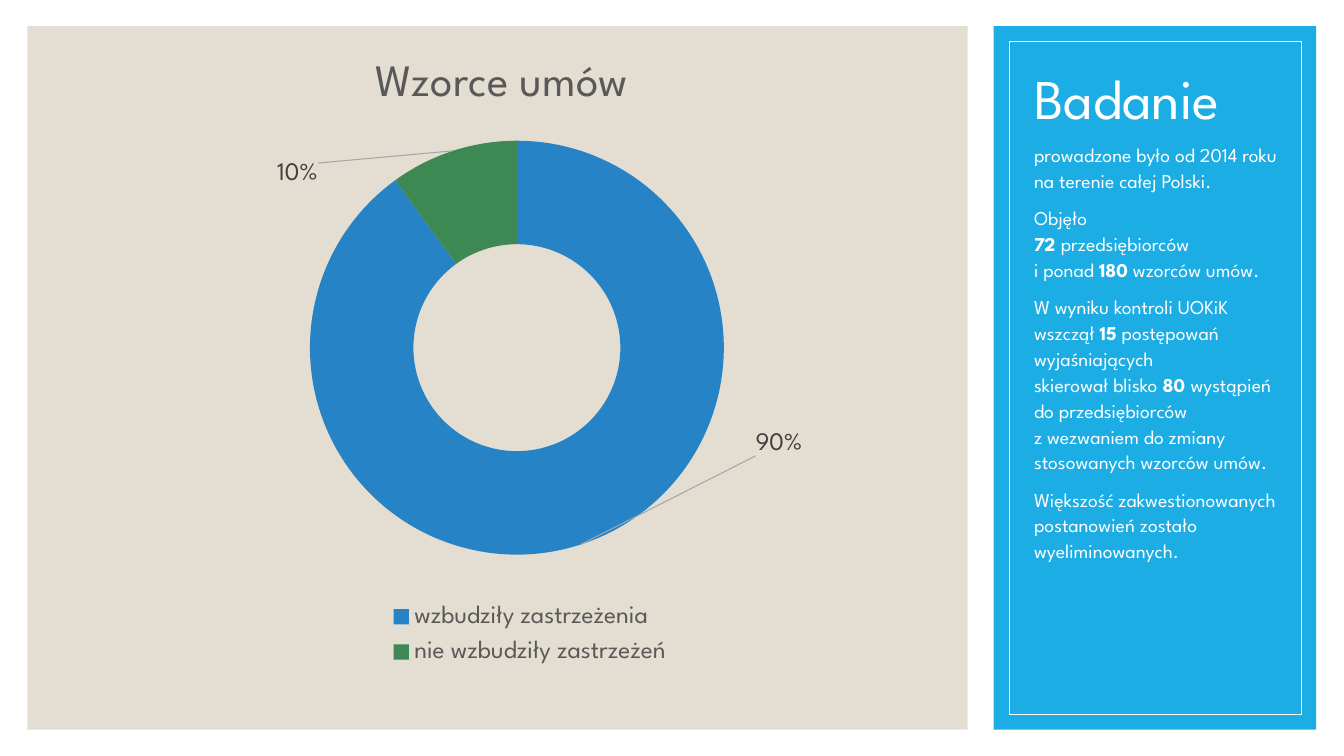
from lxml import etree
from pptx import Presentation
from pptx.chart.data import CategoryChartData
from pptx.dml.color import RGBColor
from pptx.enum.chart import XL_CHART_TYPE, XL_LEGEND_POSITION
from pptx.enum.shapes import MSO_SHAPE
from pptx.enum.text import MSO_ANCHOR
from pptx.oxml import parse_xml
from pptx.oxml.ns import qn
from pptx.util import Cm, Pt

DOUGHNUT = XL_CHART_TYPE.DOUGHNUT
BOTTOM_LEGEND = XL_LEGEND_POSITION.BOTTOM
RECTANGLE = MSO_SHAPE.RECTANGLE
TOP, BOTTOM = MSO_ANCHOR.TOP, MSO_ANCHOR.BOTTOM

FONT = "League Spartan"
COLORS = {
    "sand": "E3DED1",
    "sky": "1CADE4",
    "white": "FFFFFF",
    "blue": "2683C6",
    "green": "3E8853",
    "title": "595959",
    "label": "404040",
    "leader": "A6A6A6",
}
CHART_NS = "http://schemas.openxmlformats.org/drawingml/2006/chart"
DRAWING_NS = "http://schemas.openxmlformats.org/drawingml/2006/main"


def style(font, size, color):
    font.name = FONT
    font.size = Pt(size)
    font.color.rgb = RGBColor.from_string(COLORS[color])


def make_layout(**values):
    layout = etree.Element(qn("c:layout"))
    manual = etree.SubElement(layout, qn("c:manualLayout"))
    for tag, value in values.items():
        etree.SubElement(manual, qn(f"c:{tag}")).set("val", str(value))
    return layout


deck = Presentation()
deck.slide_width, deck.slide_height = Cm(33.87), Cm(19.05)
page = deck.slides.add_slide(deck.slide_layouts[6])

panels = [
    (0.69, 0.66, 23.7, 17.73, "sand", None),
    (25.04, 0.66, 8.13, 17.73, "sky", None),
    (25.43, 1.04, 7.37, 16.97, None, "white"),
]
for left, top, width, height, fill, line in panels:
    panel = page.shapes.add_shape(RECTANGLE, Cm(left), Cm(top), Cm(width), Cm(height))
    panel.shadow.inherit = False
    if fill:
        panel.fill.solid()
        panel.fill.fore_color.rgb = RGBColor.from_string(COLORS[fill])
    else:
        panel.fill.background()
    if line:
        panel.line.color.rgb = RGBColor.from_string(COLORS[line])
        panel.line.width = Pt(0.5)
    else:
        panel.line.fill.background()

data = CategoryChartData()
data.categories = ["wzbudziły zastrzeżenia", "nie wzbudziły zastrzeżeń"]
data.add_series("Wzorce umów", (90, 10))
chart = page.shapes.add_chart(
    DOUGHNUT, Cm(2.34), Cm(1.14), Cm(21.59), Cm(16.05), data
).chart
style(chart.font, 10, "title")

chart.has_title = True
chart_title = chart.chart_title
heading = chart_title.text_frame.paragraphs[0]
heading.text = "Wzorce umów"
style(heading.font, 32, "title")
heading.font.bold = False
chart_title.include_in_layout = False
title_xml = chart_title._element
for old in title_xml.findall(qn("c:layout")):
    title_xml.remove(old)
title_xml.find(qn("c:tx")).addnext(
    make_layout(xMode="edge", yMode="edge", x=0.32, y=0.01)
)

chart.has_legend = True
legend = chart.legend
legend.position = BOTTOM_LEGEND
legend.include_in_layout = False
style(legend.font, 18, "title")
legend_xml = legend._element
for old in legend_xml.findall(qn("c:layout")):
    legend_xml.remove(old)
legend_xml.find(qn("c:legendPos")).addnext(
    make_layout(xMode="edge", yMode="edge", x=0.33, y=0.86, w=0.36, h=0.13)
)

plot_area = chart._chartSpace.chart.plotArea
for old in plot_area.findall(qn("c:layout")):
    plot_area.remove(old)
plot_area.insert(0, make_layout(
    layoutTarget="inner", xMode="edge", yMode="edge", x=0.25, y=0.15, w=0.49, h=0.65
))
plot_area.find(".//" + qn("c:holeSize")).set("val", "75")

series = chart.plots[0].series[0]
labels = series.data_labels
style(labels.font, 18, "label")
labels.show_value = False
labels.show_percentage = True
labels.number_format = "0%"
labels.number_format_is_linked = False

slices = [("blue", 0.25, -0.08), ("green", -0.2, -0.04)]
for index, (color, shift_x, shift_y) in enumerate(slices):
    point = series.points[index]
    point.format.fill.solid()
    point.format.fill.fore_color.rgb = RGBColor.from_string(COLORS[color])
    point.format.line.fill.background()
    style(point.data_label.font, 18, "label")
    label_xml = labels._element.findall(qn("c:dLbl"))[index]
    label_xml.find(qn("c:idx")).addnext(make_layout(x=shift_x, y=shift_y))
    label_xml.find(qn("c:showVal")).set("val", "0")
    label_xml.find(qn("c:showPercent")).set("val", "1")

for old in labels._element.findall(qn("c:showLeaderLines")):
    labels._element.remove(old)
etree.SubElement(labels._element, qn("c:showLeaderLines")).set("val", "1")
labels._element.append(parse_xml(
    f'<c:leaderLines xmlns:c="{CHART_NS}" xmlns:a="{DRAWING_NS}"><c:spPr>'
    f'<a:ln w="9525"><a:solidFill><a:srgbClr val="{COLORS["leader"]}"/></a:solidFill></a:ln>'
    "</c:spPr></c:leaderLines>"
))

title_text = [[["Badanie"]]]
body_text = [
    [["prowadzone było od 2014 roku na terenie całej Polski."]],
    [["Objęło"], ["", "72 ", "przedsiębiorców "], ["i ponad ", "180", " wzorców umów."]],
    [
        ["W wyniku kontroli UOKiK wszczął ", "15", " postępowań wyjaśniających"],
        ["skierował blisko ", "80 ", "wystąpień do przedsiębiorców "],
        ["z wezwaniem do zmiany stosowanych wzorców umów."],
    ],
    [["Większość zakwestionowanych postanowień zostało wyeliminowanych."]],
]
text_boxes = [
    (-1.14, 4.57, BOTTOM, 40, 0.9, 0, title_text),
    (3.43, 14.27, TOP, 14, 1.1, 8, body_text),
]
for top, height, anchor, size, spacing, before, paragraphs in text_boxes:
    box = page.shapes.add_textbox(Cm(25.81), Cm(top), Cm(6.76), Cm(height))
    frame = box.text_frame
    frame.word_wrap = True
    frame.vertical_anchor = anchor
    for number, lines in enumerate(paragraphs):
        para = frame.add_paragraph() if number else frame.paragraphs[0]
        style(para.font, size, "white")
        para.line_spacing = spacing
        para.space_before = Pt(before)
        for row, pieces in enumerate(lines):
            if row:
                para.add_line_break()
            for position, piece in enumerate(pieces):
                if piece:
                    span = para.add_run()
                    span.text = piece
                    if position == 1:
                        span.font.bold = True

deck.save("out.pptx")
